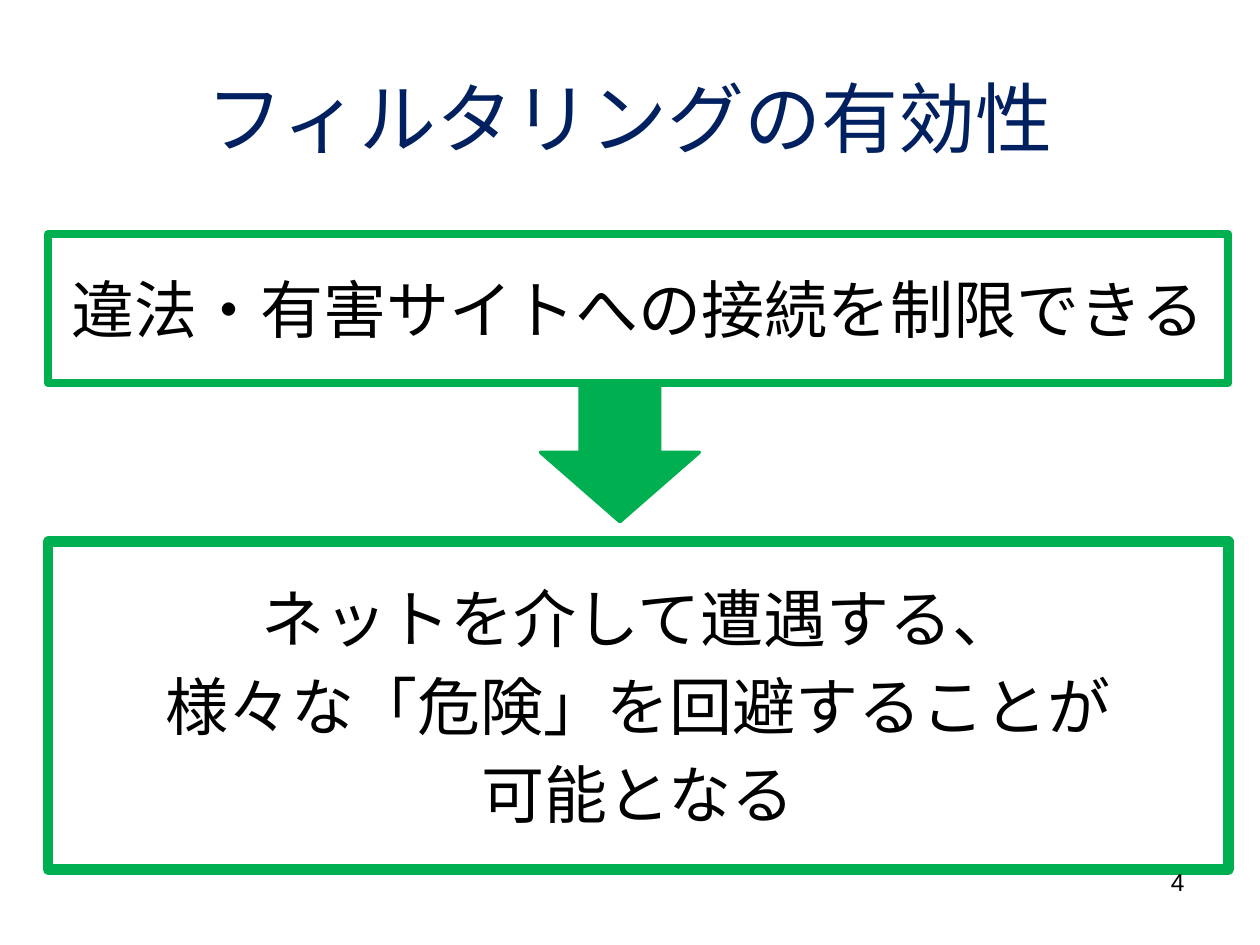
import pptx
import pptx.dml.color
import pptx.enum.shapes
import pptx.enum.text
import pptx.oxml.ns
import pptx.util
from lxml import etree

Inches = pptx.util.Inches
Pt = pptx.util.Pt
RGBColor = pptx.dml.color.RGBColor
Shape = pptx.enum.shapes.MSO_SHAPE
Align = pptx.enum.text.PP_ALIGN
Anchor = pptx.enum.text.MSO_ANCHOR

GREEN = RGBColor(0x00, 0xB0, 0x50)
NAVY = RGBColor(0x00, 0x20, 0x60)
BLACK = RGBColor(0x00, 0x00, 0x00)
FONT = "Arial"


def write_text(frame, text, size=36, color=BLACK, align=Align.CENTER,
               anchor=Anchor.MIDDLE, gap=0):
    """Write one paragraph per line, with a gap in points between them."""
    frame.word_wrap = True
    frame.vertical_anchor = anchor
    for index, line in enumerate(text.split("\n")):
        paragraph = frame.add_paragraph() if index else frame.paragraphs[0]
        paragraph.alignment = align
        paragraph.space_before = Pt(gap if index else 0)
        run = paragraph.add_run()
        run.text = line
        run.font.size = Pt(size)
        run.font.name = FONT
        run.font.color.rgb = color
        # Japanese letters take their font from a:ea
        east_asian = etree.SubElement(run.font._element, pptx.oxml.ns.qn("a:ea"))
        east_asian.set("typeface", FONT)


class SlideBuilder:
    """Holds the current slide and the style of its shapes."""

    def __init__(self, slide, accent):
        self.slide = slide
        self.accent = accent

    def title(self, left, top, width, height, text, **text_format):
        # The blank layout has no title placeholder
        self.text(left, top, width, height, text, **text_format)

    def text(self, left, top, width, height, text, **text_format):
        box = self.slide.shapes.add_textbox(
            Inches(left), Inches(top), Inches(width), Inches(height))
        write_text(box.text_frame, text, **text_format)

    def shape(self, kind, left, top, width, height, line_width):
        shape = self.slide.shapes.add_shape(
            kind, Inches(left), Inches(top), Inches(width), Inches(height))
        shape.shadow.inherit = False
        shape.line.color.rgb = self.accent
        shape.line.width = Pt(line_width)
        return shape

    def frame(self, left, top, width, height, text, line_width, **text_format):
        shape = self.shape(Shape.RECTANGLE, left, top, width, height, line_width)
        shape.fill.background()
        write_text(shape.text_frame, text, **text_format)

    def arrow(self, left, top, width, height):
        shape = self.shape(Shape.DOWN_ARROW, left, top, width, height, 2)
        shape.fill.solid()
        shape.fill.fore_color.rgb = self.accent


def main():
    presentation = pptx.Presentation()
    presentation.slide_width = Inches(10)
    presentation.slide_height = Inches(7.5)
    slide = presentation.slides.add_slide(presentation.slide_layouts[6])
    builder = SlideBuilder(slide, GREEN)

    # What filtering does
    builder.frame(0.38, 1.86, 9.37, 1.18,
                  "違法・有害サイトへの接続を制限できる", line_width=4.5)

    # Title
    builder.title(0.5, 0.3, 9, 1.25, "フィルタリングの有効性", size=44, color=NAVY)

    # What follows from it
    builder.frame(0.38, 4.3, 9.37, 2.6,
                  "ネットを介して遭遇する、\n様々な「危険」を回避することが\n可能となる",
                  line_width=6, gap=7.2)
    builder.arrow(4.29, 3.04, 1.26, 1.1)

    # Page number
    builder.text(7.17, 6.83, 2.33, 0.52, "4", size=14,
                 align=Align.RIGHT, anchor=Anchor.TOP)

    presentation.save("out.pptx")


if __name__ == "__main__":
    main()
